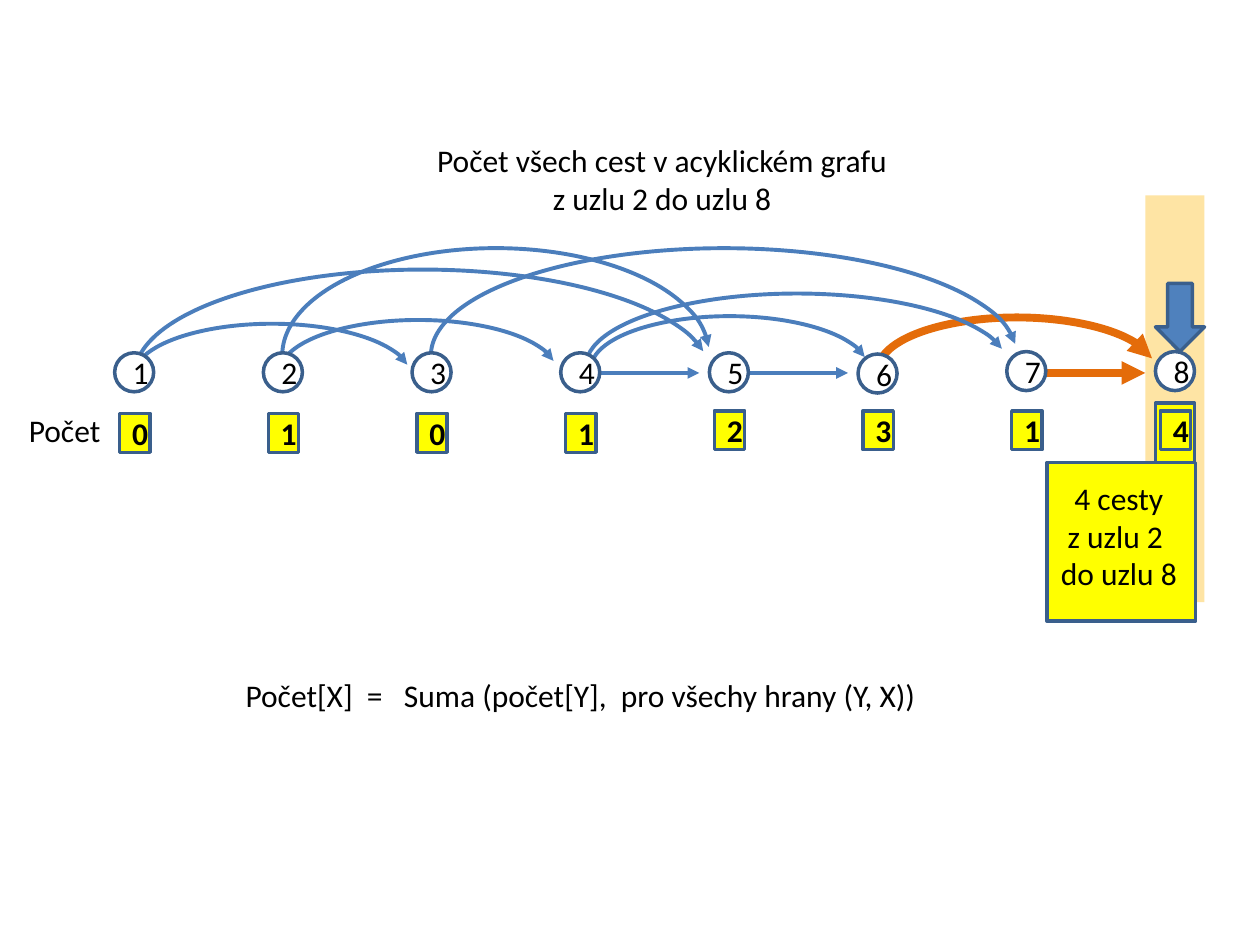
from lxml import etree
from pptx import Presentation
from pptx.dml.color import RGBColor
from pptx.enum.shapes import MSO_CONNECTOR, MSO_SHAPE
from pptx.enum.text import MSO_ANCHOR, MSO_AUTO_SIZE, PP_ALIGN
from pptx.oxml.ns import qn
from pptx.util import Inches, Pt

RECT, OVAL = MSO_SHAPE.RECTANGLE, MSO_SHAPE.OVAL
ARC, DOWN_ARROW = MSO_SHAPE.ARC, MSO_SHAPE.DOWN_ARROW
STRAIGHT = MSO_CONNECTOR.STRAIGHT
LEFT, CENTER = PP_ALIGN.LEFT, PP_ALIGN.CENTER
MIDDLE = MSO_ANCHOR.MIDDLE
FIT_SHAPE = MSO_AUTO_SIZE.SHAPE_TO_FIT_TEXT

BLACK, WHITE, YELLOW = "000000", "FFFFFF", "FFFF00"
OUTLINE, BLUE, EDGE, ORANGE, SAND = "3A5F8C", "4F81BD", "4B7EBC", "E46C0A", "FEE4A4"

STEP = 1.18
NODE_LEFT, NODE_SIZE = 0.91, 0.31
NODE_TOPS = [2.8] * 5 + [2.81] + [2.79] * 2
COUNT_LEFT, COUNT_WIDTH = 0.95, 0.24
COUNT_TOPS = [3.28] * 4 + [3.26] * 4
PATH_COUNTS = [0, 1, 0, 1, 2, 3, 1, 4]

ARC_START, ARC_END, TALL_ARC_END = 108.25, 213.11, 214.65
# left, top, width, height, end angle
BLUE_ARCS = [
    (1.06, 2.57, 2.2, 0.83, ARC_END),
    (1.07, 2.14, 4.57, 1.67, ARC_END),
    (2.24, 1.97, 3.39, 1.7, TALL_ARC_END),
    (4.69, 2.51, 2.2, 0.83, ARC_END),
    (3.42, 1.97, 4.65, 1.7, TALL_ARC_END),
    (4.65, 2.33, 3.35, 1.15, ARC_END),
    (2.22, 2.54, 2.2, 0.83, ARC_END),
]


def color(hex_string):
    return RGBColor.from_string(hex_string)


def write(frame, text, size=18, bold=False, ink=BLACK, align=CENTER, font="Calibri"):
    for number, line in enumerate(text.split("\n")):
        paragraph = frame.add_paragraph() if number else frame.paragraphs[0]
        paragraph.alignment = align
        run = paragraph.add_run()
        run.text = line
        run.font.name, run.font.size, run.font.bold = font, Pt(size), bold
        run.font.color.rgb = color(ink)


class Diagram:
    def __init__(self, slide):
        self.slide = slide

    def shape(self, kind, left, top, width, height, fill=None, line=OUTLINE, weight=2):
        shape = self.slide.shapes.add_shape(
            kind, Inches(left), Inches(top), Inches(width), Inches(height))
        shape.shadow.inherit = False
        if fill:
            shape.fill.solid()
            shape.fill.fore_color.rgb = color(fill)
        else:
            shape.fill.background()
        if line:
            shape.line.color.rgb = color(line)
            shape.line.width = Pt(weight)
        else:
            shape.line.fill.background()
        return shape

    def label(self, kind, left, top, width, height, text, fill, **text_format):
        shape = self.shape(kind, left, top, width, height, fill)
        shape.text_frame.vertical_anchor = MIDDLE
        write(shape.text_frame, text, **text_format)

    def arrowhead(self, shape):
        outline = shape.element.spPr.find(qn("a:ln"))
        etree.SubElement(outline, qn("a:tailEnd"), type="triangle")

    def arc(self, left, top, width, height, end, line=EDGE, weight=2.25):
        arc = self.shape(ARC, left, top, width, height, line=line, weight=weight)
        arc.adjustments[0] = ARC_START
        arc.adjustments[1] = end
        self.arrowhead(arc)

    def arrow(self, start, end, y, line=EDGE, weight=2.25):
        arrow = self.slide.shapes.add_connector(
            STRAIGHT, Inches(start), Inches(y), Inches(end), Inches(y))
        arrow.line.color.rgb = color(line)
        arrow.line.width = Pt(weight)
        self.arrowhead(arrow)
        etree.SubElement(arrow.element.spPr, qn("a:effectLst"))

    def text(self, left, top, width, height, text, wrap=False, **text_format):
        box = self.slide.shapes.add_textbox(
            Inches(left), Inches(top), Inches(width), Inches(height))
        box.text_frame.word_wrap = wrap
        box.text_frame.auto_size = FIT_SHAPE
        write(box.text_frame, text, **text_format)


def main():
    presentation = Presentation()
    presentation.slide_width, presentation.slide_height = Inches(10), Inches(7.5)
    diagram = Diagram(presentation.slides.add_slide(presentation.slide_layouts[6]))

    diagram.shape(RECT, 9.09, 1.55, 0.47, 3.23, SAND, line=None)
    diagram.shape(RECT, 8.31, 3.67, 1.18, 1.26, YELLOW)
    diagram.shape(RECT, 9.17, 3.2, 0.31, 0.47, YELLOW)

    diagram.arc(6.97, 2.52, 2.2, 0.83, ARC_END, line=ORANGE, weight=4.5)
    for arc in BLUE_ARCS:
        diagram.arc(*arc)
    diagram.arrow(4.76, 5.55, 2.96)
    diagram.arrow(5.94, 6.73, 2.96)
    diagram.arrow(8.31, 9.09, 2.96, line=ORANGE, weight=4.5)

    for i, (node_top, count_top, count) in enumerate(
            zip(NODE_TOPS, COUNT_TOPS, PATH_COUNTS)):
        diagram.label(OVAL, NODE_LEFT + i * STEP, node_top, NODE_SIZE, NODE_SIZE,
                      str(i + 1), WHITE)
        diagram.label(RECT, COUNT_LEFT + i * STEP, count_top, COUNT_WIDTH, NODE_SIZE,
                      str(count), YELLOW, bold=True)

    diagram.shape(DOWN_ARROW, 9.17, 2.25, 0.39, 0.54, BLUE)
    diagram.text(8.31, 3.75, 1.14, 1.01, "4 cesty\nz uzlu 2 \ndo uzlu 8")
    diagram.text(3.35, 1.07, 3.81, 0.71,
                 "Počet všech cest v acyklickém grafu\nz uzlu 2 do uzlu 8")
    diagram.text(0.13, 3.21, 0.78, 0.4, "Počet", align=LEFT)
    diagram.text(1.85, 5.32, 5.91, 0.4,
                 "Počet[X]  =   Suma (počet[Y],  pro všechy hrany (Y, X))",
                 wrap=True, align=LEFT)

    presentation.save("out.pptx")


if __name__ == "__main__":
    main()
